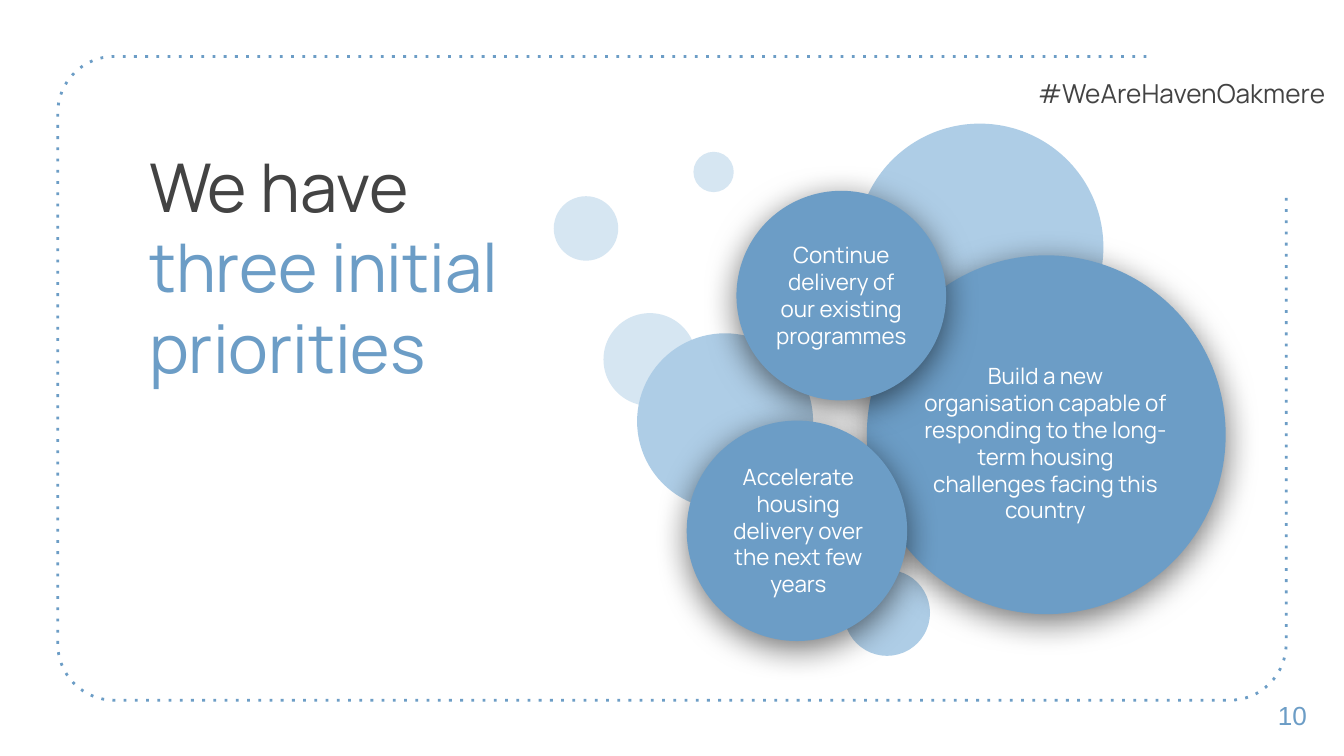
import math
from typing import NamedTuple

from lxml import etree
from pptx import Presentation
from pptx.dml.color import RGBColor
from pptx.enum.dml import MSO_LINE
from pptx.enum.shapes import MSO_SHAPE
from pptx.enum.text import MSO_ANCHOR, MSO_AUTO_SIZE, PP_ALIGN
from pptx.oxml.ns import qn
from pptx.util import Inches, Pt

OVAL = MSO_SHAPE.OVAL
DOT = MSO_LINE.ROUND_DOT
TOP, MIDDLE = MSO_ANCHOR.TOP, MSO_ANCHOR.MIDDLE
LEFT, CENTER, RIGHT = PP_ALIGN.LEFT, PP_ALIGN.CENTER, PP_ALIGN.RIGHT
FIXED, GROW = MSO_AUTO_SIZE.NONE, MSO_AUTO_SIZE.SHAPE_TO_FIT_TEXT

COLORS = {
    "blue": "6C9DC6",
    "mid": "AECDE6",
    "pale": "D6E6F2",
    "text": "434343",
    "white": "FFFFFF",
    "shadow": "000000",
}
FONT = "Manrope"


class Area(NamedTuple):
    left: float
    top: float
    width: float
    height: float


class Bubble(NamedTuple):
    left: float
    top: float
    diameter: float
    color: str


class Priority(NamedTuple):
    bubble: Bubble
    area: Area
    text: str


BUBBLES = [
    Bubble(4.49, 2.33, 0.69, "pale"),
    Bubble(6.28, 4.24, 0.64, "mid"),
    Bubble(4.12, 1.46, 0.48, "pale"),
    Bubble(4.74, 2.48, 1.31, "mid"),
    Bubble(6.37, 0.92, 1.84, "mid"),
    Bubble(5.16, 1.13, 0.3, "pale"),
]
PRIORITIES = [
    Priority(Bubble(6.45, 1.9, 2.67, "blue"), Area(6.76, 2.66, 2.04, 1.27),
             "Build a new organisation capable of responding to the long-term "
             "housing challenges facing this country"),
    Priority(Bubble(5.48, 1.42, 1.56, "blue"), Area(5.63, 1.68, 1.26, 1.03),
             "Continue delivery of our existing programmes"),
    Priority(Bubble(5.11, 3.13, 1.64, "blue"), Area(5.28, 3.43, 1.32, 1.03),
             "Accelerate housing delivery over the next few years"),
]


def color_of(name: str) -> RGBColor:
    return RGBColor.from_string(COLORS[name])


def add_run(para, text: str, size: float, color: str, font: str = FONT) -> None:
    span = para.add_run()
    span.text = text
    span.font.name = font
    span.font.size = Pt(size)
    span.font.color.rgb = color_of(color)


def prepare_frame(box, align, anchor, inset: float = 0.1, fit=FIXED):
    """Lay out the text frame of a box and return its first paragraph."""
    frame = box.text_frame
    frame.word_wrap = True
    frame.auto_size = fit
    frame.vertical_anchor = anchor
    frame.margin_left = frame.margin_right = Inches(0.1)
    frame.margin_top = frame.margin_bottom = Inches(inset)
    para = frame.paragraphs[0]
    para.alignment = align
    return para


def add_text(page, area: Area, text: str, size: float, color: str, align,
             anchor=MIDDLE, font: str = FONT, inset: float = 0.1, fit=FIXED) -> None:
    box = page.shapes.add_textbox(*(Inches(length) for length in area))
    para = prepare_frame(box, align, anchor, inset, fit)
    add_run(para, text, size, color, font)


def add_bubble(page, bubble: Bubble):
    side = Inches(bubble.diameter)
    shape = page.shapes.add_shape(
        OVAL, Inches(bubble.left), Inches(bubble.top), side, side)
    shape.shadow.inherit = False
    shape.fill.solid()
    shape.fill.fore_color.rgb = color_of(bubble.color)
    shape.line.fill.background()
    return shape


def cast_shadow(shape) -> None:
    """Give the shape a soft black shadow that falls straight down."""
    effects = shape.element.spPr.find(qn("a:effectLst"))
    outer = etree.SubElement(
        effects, qn("a:outerShdw"), blurRad=str(Pt(18)), dist=str(Pt(4)),
        dir=str(90 * 60000), algn="bl", rotWithShape="0")
    tint = etree.SubElement(outer, qn("a:srgbClr"), val=COLORS["shadow"])
    etree.SubElement(tint, qn("a:alpha"), val="55000")


def add_priority(page, priority: Priority) -> None:
    cast_shadow(add_bubble(page, priority.bubble))
    add_text(page, priority.area, priority.text, 12, "white", CENTER)


def corner(x: float, y: float, radius: float, start: int) -> list[tuple[float, float]]:
    """Points of a quarter circle around (x, y), turning back from start degrees."""
    steps = 16
    angles = [math.radians(start - 90 * step / steps) for step in range(steps + 1)]
    return [(x + radius * math.cos(angle), y + radius * math.sin(angle))
            for angle in angles]


def add_dotted_border(page) -> None:
    """Draw the rounded border that stays open at the top right."""
    left, top, right, bottom, radius = 0.43, 0.42, 9.57, 5.21, 0.42
    points = [
        (8.53, top),
        *corner(left + radius, top + radius, radius, 270),
        *corner(left + radius, bottom - radius, radius, 180),
        *corner(right - radius, bottom - radius, radius, 90),
        (right, 1.46),
    ]
    start, *rest = [(Inches(x), Inches(y)) for x, y in points]
    builder = page.shapes.build_freeform(*start)
    builder.add_line_segments(rest, close=False)
    border = builder.convert_to_shape()
    border.shadow.inherit = False
    border.fill.background()
    border.line.color.rgb = color_of("blue")
    border.line.width = Pt(1.5)
    border.line.dash_style = DOT
    border.element.spPr.find(".//" + qn("a:prstDash")).set("val", "dot")


def fill_title(page) -> None:
    title = page.shapes.title
    title.left, title.top = Inches(1.01), Inches(0.98)
    title.width, title.height = Inches(2.97), Inches(0.94)
    para = prepare_frame(title, LEFT, TOP)
    add_run(para, "We have ", 36, "text")
    add_run(para, "three initial priorities", 36, "blue")


def main() -> None:
    deck = Presentation()
    deck.slide_width = Inches(10)
    deck.slide_height = deck.slide_width * 9 // 16
    page = deck.slides.add_slide(deck.slide_layouts[5])

    add_dotted_border(page)
    add_text(page, Area(7.36, 0.53, 2.6, 0.34), "#WeAreHavenOakmere", 14, "text",
             RIGHT, TOP, inset=0.05, fit=GROW)
    fill_title(page)
    add_text(page, Area(9.41, 5.02, 0.59, 0.6), "10", 14, "blue", LEFT, font="Arial")
    for bubble in BUBBLES:
        add_bubble(page, bubble)
    for priority in PRIORITIES:
        add_priority(page, priority)

    deck.save("out.pptx")


if __name__ == "__main__":
    main()
